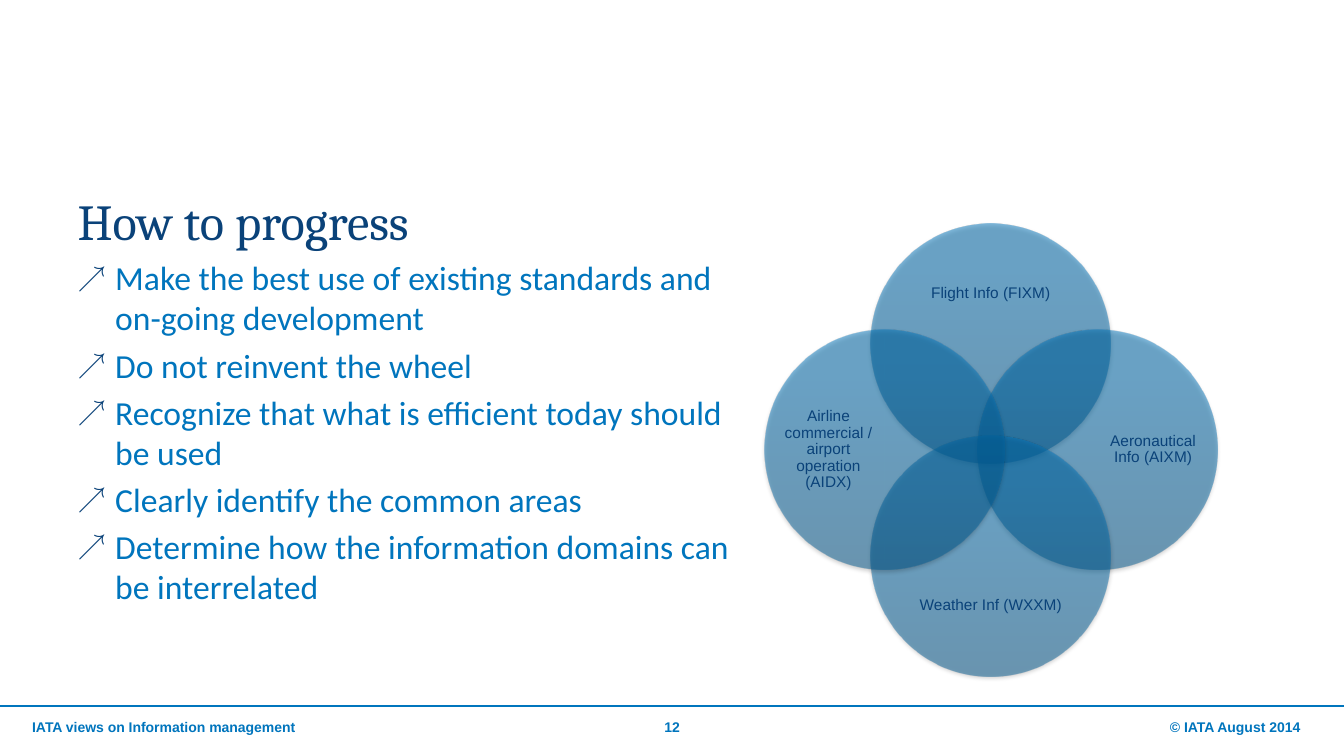
from lxml import etree
from pptx import Presentation
from pptx.dml.color import RGBColor
from pptx.enum.shapes import MSO_CONNECTOR, MSO_SHAPE
from pptx.enum.text import MSO_ANCHOR, MSO_AUTO_SIZE, PP_ALIGN
from pptx.oxml import parse_xml
from pptx.oxml.ns import qn
from pptx.util import Cm, Pt

LEFT, CENTER, RIGHT = PP_ALIGN.LEFT, PP_ALIGN.CENTER, PP_ALIGN.RIGHT
TOP, MIDDLE = MSO_ANCHOR.TOP, MSO_ANCHOR.MIDDLE
NAVY, BLUE = "0A4279", "0075BD"
DRAWING = "http://schemas.openxmlformats.org/drawingml/2006/main"


def color(hex_code):
    return RGBColor.from_string(hex_code)


def write(box, place, text, size, font="Arial", ink=NAVY, bold=False,
          align=LEFT, anchor=TOP, inset=None, line_spacing=None):
    """Place a box and fill it with text, one paragraph per line."""
    box.left, box.top, box.width, box.height = [Cm(length) for length in place]
    frame = box.text_frame
    frame.text = text
    frame.word_wrap = True
    frame.auto_size = MSO_AUTO_SIZE.NONE
    frame.vertical_anchor = anchor
    if inset is not None:
        frame.margin_left = frame.margin_right = Cm(inset)
        frame.margin_top = frame.margin_bottom = Cm(inset)
    for para in frame.paragraphs:
        para.alignment = align
        if line_spacing:
            para.line_spacing = line_spacing
        for span in para.runs:
            span.font.name = font
            span.font.size = Pt(size)
            span.font.bold = bold
            span.font.color.rgb = color(ink)
    return frame


deck = Presentation()
deck.slide_width, deck.slide_height = Cm(33.87), Cm(19.05)
page = deck.slides.add_slide(deck.slide_layouts[1])
shapes = page.shapes

# Footer rule
rule = shapes.add_connector(MSO_CONNECTOR.STRAIGHT, 0, Cm(17.78), deck.slide_width, Cm(17.78))
rule.line.color.rgb = color(BLUE)
rule.line.width = Pt(1.5)
etree.SubElement(rule._element.spPr, qn("a:effectLst"))

# Title
write(shapes.title, (1.7, 4.65, 30.48, 1.78), "How to progress", 36,
      font="Cambria", anchor=MIDDLE)

# Bulleted list
points = [
    "Make the best use of existing standards and on-going development",
    "Do not reinvent the wheel",
    "Recognize that what is efficient today should be used",
    "Clearly identify the common areas",
    "Determine how the information domains can be interrelated",
]
body = write(page.placeholders[1], (1.7, 6.35, 17.5, 10.57), "\n".join(points), 24,
             font="Calibri", ink=BLUE)
for number, para in enumerate(body.paragraphs):
    para.space_before = Pt(4.8 if number else 0)
    properties = para._p.get_or_add_pPr()
    properties.set("marL", str(Cm(0.95)))
    properties.set("indent", str(-Cm(0.95)))
    bullet_color = etree.SubElement(properties, qn("a:buClr"))
    etree.SubElement(bullet_color, qn("a:srgbClr"), val=NAVY)
    etree.SubElement(properties, qn("a:buSzPct"), val="85000")
    etree.SubElement(properties, qn("a:buChar"), char="↗")

# Overlapping circles around one centre, each with its label
center_x, center_y, diameter, circle_shift = 24.97, 11.33, 6.05, 2.68
domains = [  # direction, label shift, label size, text
    (0, -1, 3.94, (4.65, 1.93), "Flight Info (FIXM)"),
    (1, 0, 4.09, (2.34, 4.65), "Aeronautical Info (AIXM)"),
    (0, 1, 3.94, (4.65, 1.93), "Weather Inf (WXXM)"),
    (-1, 0, 4.09, (2.34, 4.65), "Airline commercial / airport operation (AIDX)"),
]
stops = "".join(
    f'<a:gs pos="{position}000"><a:srgbClr val="{tint}"><a:alpha val="50000"/></a:srgbClr></a:gs>'
    for position, tint in [(0, "00578D"), (80, "0071B7"), (100, "0072B8")])
gradient = (f'<a:gradFill xmlns:a="{DRAWING}" rotWithShape="1"><a:gsLst>{stops}</a:gsLst>'
            '<a:lin ang="16200000" scaled="0"/></a:gradFill>')
shadow = (f'<a:effectLst xmlns:a="{DRAWING}">'
          '<a:outerShdw blurRad="40000" dist="23000" dir="5400000" rotWithShape="0">'
          '<a:srgbClr val="000000"><a:alpha val="35000"/></a:srgbClr>'
          '</a:outerShdw></a:effectLst>')
for across, down, label_shift, (width, height), text in domains:
    circle = shapes.add_shape(
        MSO_SHAPE.OVAL,
        Cm(center_x + across * circle_shift - diameter / 2),
        Cm(center_y + down * circle_shift - diameter / 2),
        Cm(diameter), Cm(diameter))
    circle.line.fill.background()
    outline = circle._element.spPr.find(qn("a:ln"))
    outline.addprevious(parse_xml(gradient))
    outline.addnext(parse_xml(shadow))
    place = (center_x + across * label_shift - width / 2,
             center_y + down * label_shift - height / 2, width, height)
    write(shapes.add_textbox(0, 0, 0, 0), place, text, 11,
          align=CENTER, anchor=MIDDLE, inset=0, line_spacing=0.9)

# Footer texts
footers = [
    (21.74, 11.28, "© IATA August 2014", RIGHT),
    (0.56, 11.58, "IATA views on Information management", LEFT),
    (14.68, 4.52, "12", CENTER),
]
for left, width, text, align in footers:
    write(shapes.add_textbox(0, 0, 0, 0), (left, 17.98, width, 0.64), text, 10,
          ink=BLUE, bold=True, align=align)

deck.save("out.pptx")
